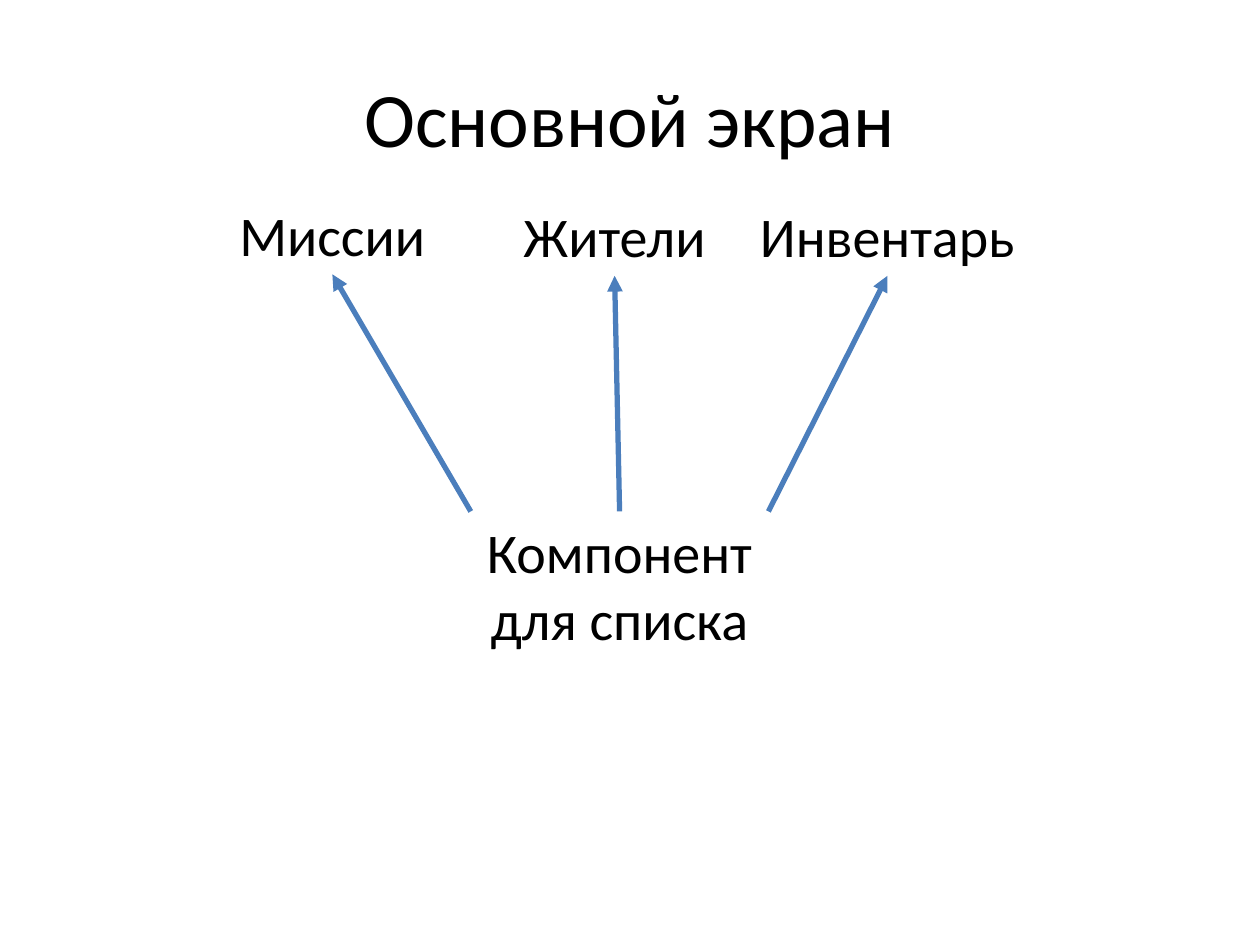
from lxml.etree import SubElement
from pptx import Presentation
from pptx.dml.color import RGBColor
from pptx.enum.shapes import MSO_CONNECTOR as Connector
from pptx.enum.text import MSO_ANCHOR as Anchor, PP_ALIGN as Align
from pptx.oxml.ns import qn
from pptx.util import Cm, Pt

TITLE = "Основной экран"
SECTIONS = [("Миссии", 6.7, 3.91), ("Жители", 12.39, 3.94), ("Инвентарь", 17.89, 3.94)]
COMPONENT = "Компонент для списка"

FONT, BLACK, BLUE = "Calibri", "000000", "4B7EBC"
LABEL_WIDTH, LABEL_HEIGHT = 7.19, 1.62
COMPONENT_CENTER, COMPONENT_TOP, COMPONENT_HEIGHT = 12.49, 10.31, 3
ARROW_GAP = 3


def color(value):
    return RGBColor.from_string(value)


def write(box, text, size):
    box.text_frame.word_wrap = True
    para = box.text_frame.paragraphs[0]
    para.text = text
    para.alignment = Align.CENTER
    para.font.name = FONT
    para.font.size = Pt(size)
    para.font.color.rgb = color(BLACK)


def add_label(page, text, center, top, height):
    left = center - LABEL_WIDTH / 2
    box = page.shapes.add_textbox(Cm(left), Cm(top), Cm(LABEL_WIDTH), Cm(height))
    write(box, text, 32)


def add_arrow(page, x1, y1, x2, y2):
    arrow = page.shapes.add_connector(Connector.STRAIGHT, Cm(x1), Cm(y1), Cm(x2), Cm(y2))
    arrow.line.color.rgb = color(BLUE)
    arrow.line.width = Pt(3)
    SubElement(arrow.line._get_or_add_ln(), qn("a:tailEnd"), type="triangle")
    SubElement(arrow._element.spPr, qn("a:effectLst"))


def main():
    deck = Presentation()
    deck.slide_width, deck.slide_height = Cm(25.4), Cm(19.05)
    page = deck.slides.add_slide(deck.slide_layouts[5])

    title = page.shapes.title
    title.left, title.top, title.width, title.height = Cm(1.27), Cm(0.76), Cm(22.86), Cm(3.18)
    title.text_frame.vertical_anchor = Anchor.MIDDLE
    write(title, TITLE, 44)

    for index, (name, center, top) in enumerate(SECTIONS):
        add_label(page, name, center, top, LABEL_HEIGHT)
        start = COMPONENT_CENTER + (index - 1) * ARROW_GAP
        add_arrow(page, start, COMPONENT_TOP, center, top + LABEL_HEIGHT)

    add_label(page, COMPONENT, COMPONENT_CENTER, COMPONENT_TOP, COMPONENT_HEIGHT)
    deck.save("out.pptx")


if __name__ == "__main__":
    main()
